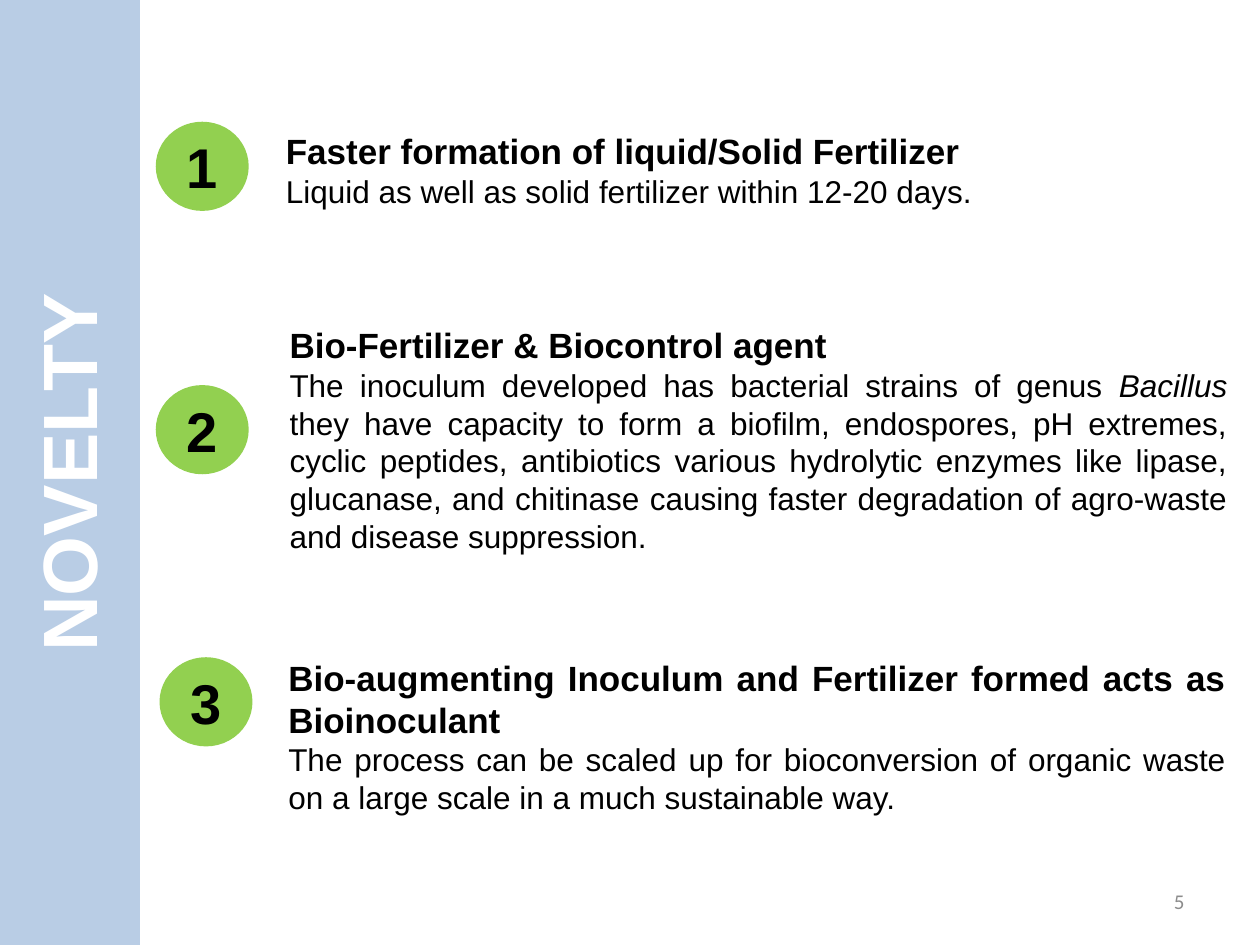
"""Build the novelty slide with three numbered points."""
from pptx import Presentation
from pptx.dml.color import RGBColor
from pptx.enum import shapes, text
from pptx.util import Inches, Pt

BLUE = RGBColor(0xB9, 0xCD, 0xE5)
GREEN = RGBColor(0x92, 0xD0, 0x50)
GRAY = RGBColor(0x8C, 0x8C, 0x8C)
WHITE = RGBColor(0xFF, 0xFF, 0xFF)
BLACK = RGBColor(0, 0, 0)

POINTS = [
    (1.25, 0.98, 2.17, 0.98, 0.74,
     "Faster formation of liquid/Solid Fertilizer",
     [("Liquid as well as solid fertilizer within 12-20 days.", False)]),
    (1.25, 3.07, 2.2, 2.52, 1.95,
     "Bio-Fertilizer & Biocontrol agent",
     [("The inoculum developed has bacterial strains of genus ", False),
      ("Bacillus ", True),
      ("they have capacity to form a biofilm, endospores, pH extremes, "
       "cyclic peptides, antibiotics various hydrolytic enzymes like lipase, "
       "glucanase, and chitinase causing faster degradation of agro-waste "
       "and disease suppression.", False)]),
    (1.28, 5.23, 2.19, 5.16, 1.78,
     "Bio-augmenting Inoculum and Fertilizer formed acts as Bioinoculant",
     [("The process can be scaled up for bioconversion of organic waste "
       "on a large scale in a much sustainable way.", False)]),
]


def add_run(para, words, size, color=BLACK, bold=False, italic=False, face="Arial"):
    """Add one formatted run to a paragraph."""
    run = para.add_run()
    run.text = words
    font = run.font
    font.name, font.size = face, Pt(size)
    font.bold, font.italic = bold, italic
    font.color.rgb = color


def paint(shape, color):
    """Give a shape one colour for fill and line."""
    shape.fill.solid()
    shape.fill.fore_color.rgb = color
    shape.line.color.rgb = color
    shape.line.width = Pt(2)


def add_label(shape, words, size, color):
    """Centre a bold label in a shape."""
    frame = shape.text_frame
    frame.vertical_anchor = text.MSO_ANCHOR.MIDDLE
    para = frame.paragraphs[0]
    para.alignment = text.PP_ALIGN.CENTER
    add_run(para, words, size, color, bold=True)


def set_title(slide, words):
    """Turn the title into an upright side banner."""
    title = slide.shapes.title
    title.left, title.top = Inches(-3.22), Inches(3.18)
    title.width, title.height = Inches(7.5), Inches(1.14)
    title.rotation = 270
    paint(title, BLUE)
    title.text_frame.auto_size = text.MSO_AUTO_SIZE.NONE
    add_label(title, words, 44, WHITE)


def add_badge(slide, left, top, words):
    """Add a round number badge."""
    badge = slide.shapes.add_shape(
        shapes.MSO_SHAPE.OVAL, Inches(left), Inches(top), Inches(0.71), Inches(0.68))
    badge.shadow.inherit = False
    paint(badge, GREEN)
    add_label(badge, words, 32, BLACK)


def add_box(slide, left, top, width, height):
    """Add a wrapping text box and return its frame."""
    box = slide.shapes.add_textbox(
        Inches(left), Inches(top), Inches(width), Inches(height))
    box.text_frame.word_wrap = True
    return box.text_frame


def add_point(slide, left, top, height, head, body):
    """Add a bold heading with justified text below it."""
    frame = add_box(slide, left, top, 7.64, height)
    frame.auto_size = text.MSO_AUTO_SIZE.SHAPE_TO_FIT_TEXT
    first, second = frame.paragraphs[0], frame.add_paragraph()
    first.alignment = second.alignment = text.PP_ALIGN.JUSTIFY
    add_run(first, head, 20, bold=True)
    for words, italic in body:
        add_run(second, words, 18, italic=italic)


def add_page(slide, words):
    """Add the page number."""
    frame = add_box(slide, 7.17, 6.95, 2.33, 0.4)
    frame.vertical_anchor = text.MSO_ANCHOR.MIDDLE
    para = frame.paragraphs[0]
    para.alignment = text.PP_ALIGN.RIGHT
    add_run(para, words, 12, GRAY, face="Calibri")


def main():
    """Build and save the slide."""
    deck = Presentation()
    deck.slide_width, deck.slide_height = Inches(10), Inches(7.5)
    slide = deck.slides.add_slide(deck.slide_layouts[5])
    set_title(slide, "NOVELTY")
    for count, (x, y, left, top, height, head, body) in enumerate(POINTS, 1):
        add_badge(slide, x, y, str(count))
        add_point(slide, left, top, height, head, body)
    add_page(slide, "5")
    deck.save("out.pptx")


if __name__ == "__main__":
    main()
